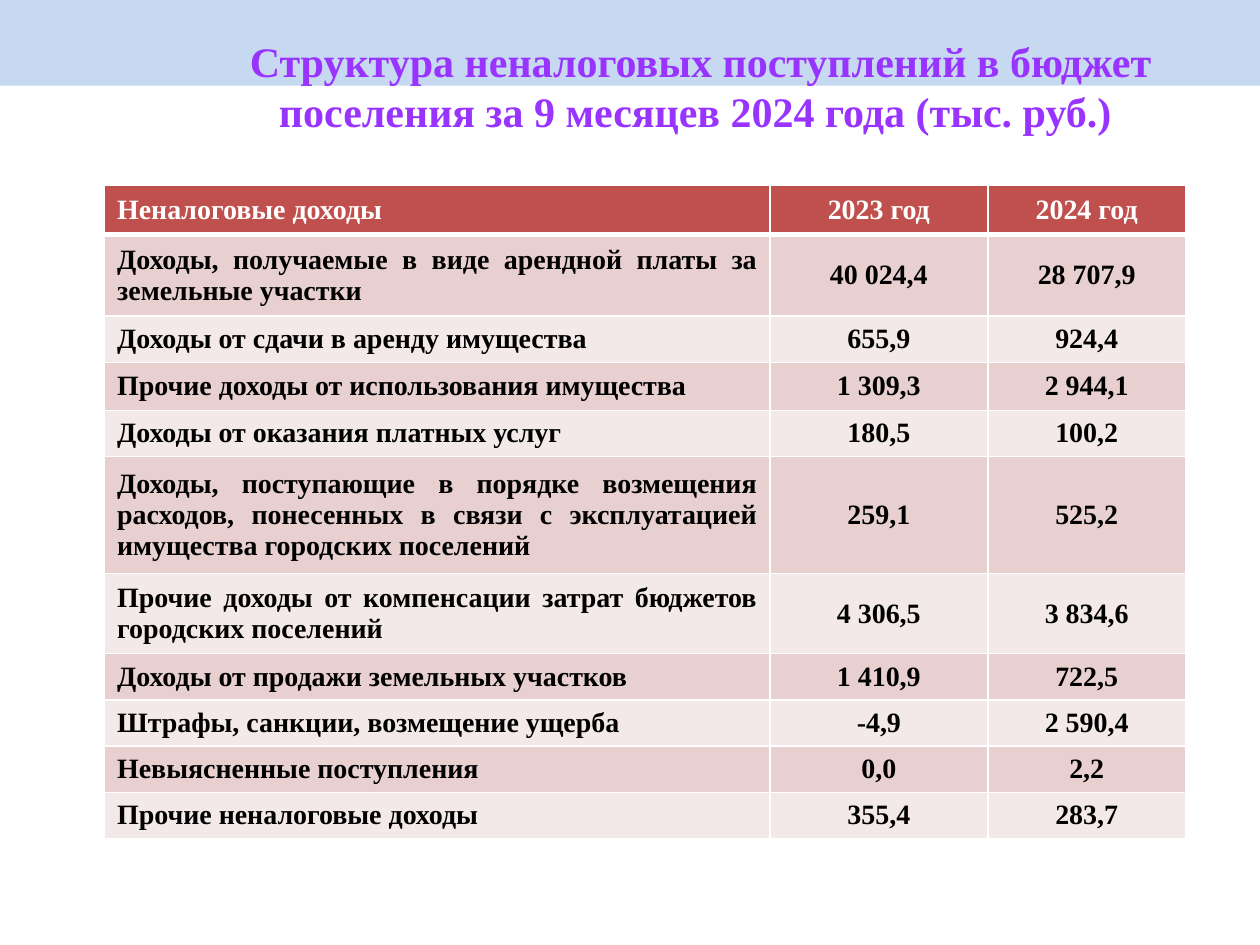
from typing import NamedTuple

from lxml.etree import SubElement
from pptx import Presentation
from pptx.dml.color import RGBColor
from pptx.enum.shapes import MSO_SHAPE as Shape
from pptx.enum.text import MSO_ANCHOR as Anchor, PP_ALIGN as Align
from pptx.oxml.ns import qn
from pptx.util import Inches, Pt

FONT = "Times New Roman"
WHITE, BLACK = "FFFFFF", "000000"
BAND, TITLE = "C6D9F1", "9933FF"
HEADER, ODD, EVEN = "C0504D", "E8D0D0", "F4E9E9"


class Income(NamedTuple):
    name: str
    year_2023: str
    year_2024: str
    height: float = 0.35


HEADINGS = Income("Неналоговые доходы", "2023 год", "2024 год", 0.39)
INCOMES = [
    Income("Доходы, получаемые в виде арендной платы за земельные участки",
           "40 024,4", "28 707,9", 0.65),
    Income("Доходы от сдачи в аренду имущества", "655,9", "924,4"),
    Income("Прочие доходы от использования имущества", "1 309,3", "2 944,1", 0.38),
    Income("Доходы от оказания платных услуг", "180,5", "100,2"),
    Income("Доходы, поступающие в порядке возмещения расходов, понесенных в связи "
           "с эксплуатацией имущества городских поселений", "259,1", "525,2", 0.93),
    Income("Прочие доходы от компенсации затрат бюджетов городских поселений",
           "4 306,5", "3 834,6", 0.59),
    Income("Доходы от продажи земельных участков", "1 410,9", "722,5"),
    Income("Штрафы, санкции, возмещение ущерба", "-4,9", "2 590,4"),
    Income("Невыясненные поступления", "0,0", "2,2"),
    Income("Прочие неналоговые доходы", "355,4", "283,7"),
]
COLUMN_WIDTHS = (5.28, 1.73, 1.57)


def color(value: str) -> RGBColor:
    return RGBColor.from_string(value)


def write(frame, text: str, size: int, ink: str, align) -> None:
    para = frame.paragraphs[0]
    para.alignment = align
    span = para.add_run()
    span.text = text
    for name, value in {"name": FONT, "size": Pt(size), "bold": True}.items():
        setattr(span.font, name, value)
    span.font.color.rgb = color(ink)


def set_borders(cell, widths: dict[str, int]) -> None:
    properties = cell._tc.get_or_add_tcPr()
    for side, width in widths.items():
        line = SubElement(properties, qn(f"a:ln{side}"), w=str(Pt(width)))
        fill = SubElement(line, qn("a:solidFill"))
        SubElement(fill, qn("a:srgbClr"), val=WHITE)


def fill_row(table, index: int, income: Income) -> None:
    is_header = index == 0
    table.rows[index].height = Inches(income.height)
    background = HEADER if is_header else ODD if index % 2 else EVEN
    name_align = Align.LEFT if is_header else Align.JUSTIFY
    # The line under the header is thicker than the rest
    borders = {"L": 1, "R": 1, "T": 3 if index == 1 else 1, "B": 3 if is_header else 1}
    texts = (income.name, income.year_2023, income.year_2024)
    for column, text in enumerate(texts):
        cell = table.cell(index, column)
        cell.vertical_anchor = Anchor.MIDDLE
        set_borders(cell, borders)
        cell.fill.solid()
        cell.fill.fore_color.rgb = color(background)
        write(cell.text_frame, text, 16, WHITE if is_header else BLACK,
              Align.CENTER if column else name_align)


def main() -> None:
    deck = Presentation()
    deck.slide_width, deck.slide_height = Inches(10), Inches(7.5)
    page = deck.slides.add_slide(deck.slide_layouts[6])

    # Top band
    band = page.shapes.add_shape(Shape.RECTANGLE, 0, 0, deck.slide_width, Inches(0.68))
    band.shadow.inherit = False
    band.fill.solid()
    band.fill.fore_color.rgb = color(BAND)
    band.line.fill.background()

    # Title
    box = page.shapes.add_textbox(Inches(1.12), Inches(0.23), Inches(8.88), Inches(0.9))
    box.text_frame.word_wrap = True
    write(box.text_frame, "Структура неналоговых поступлений в бюджет поселения "
          "за 9 месяцев 2024 года (тыс. руб.) ", 24, TITLE, Align.CENTER)

    # Income table
    rows = [HEADINGS, *INCOMES]
    table = page.shapes.add_table(
        len(rows), len(COLUMN_WIDTHS), Inches(0.83), Inches(1.47),
        Inches(sum(COLUMN_WIDTHS)), Inches(sum(row.height for row in rows))).table
    for column, width in zip(table.columns, COLUMN_WIDTHS):
        column.width = Inches(width)
    for index, income in enumerate(rows):
        fill_row(table, index, income)

    deck.save("out.pptx")


if __name__ == "__main__":
    main()
